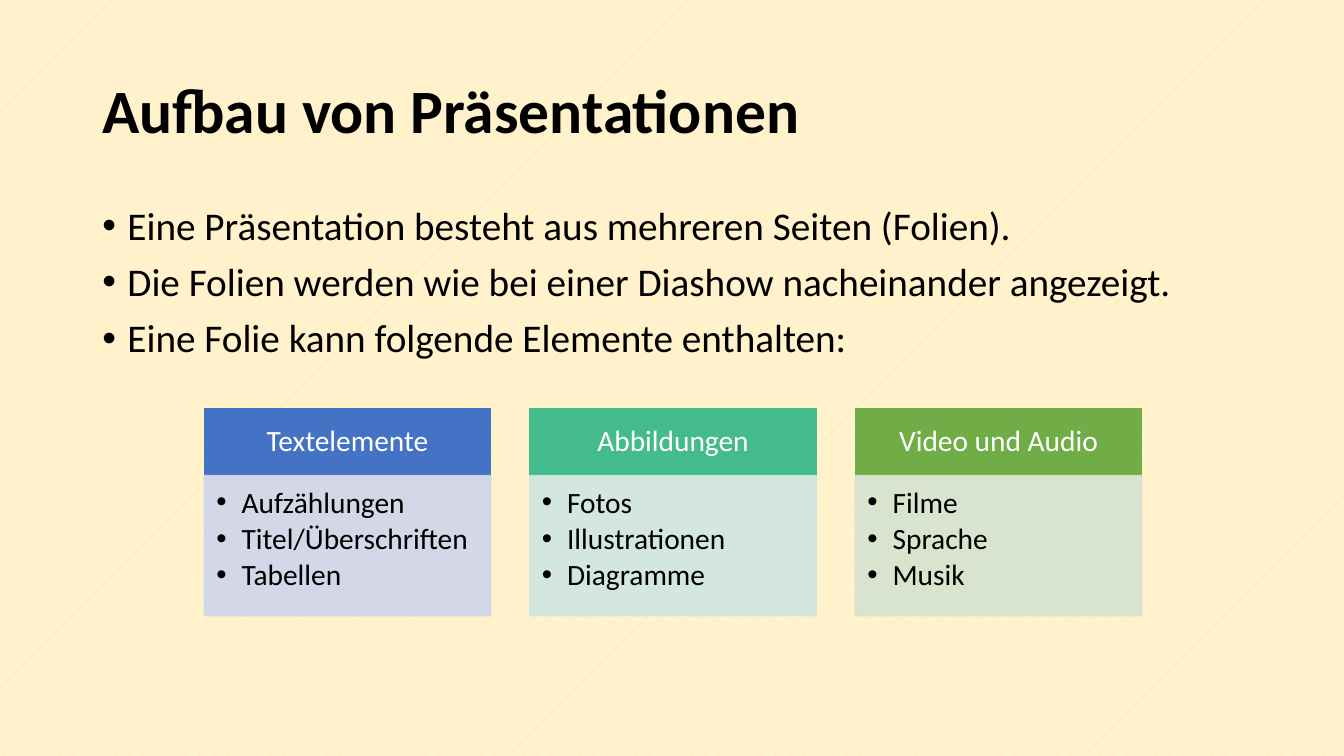
import lxml.etree
import pptx
import pptx.dml.color
import pptx.enum.dml
import pptx.enum.shapes
import pptx.enum.text
import pptx.oxml.ns
import pptx.util

Pt = pptx.util.Pt
RGBColor = pptx.dml.color.RGBColor
ANCHOR = pptx.enum.text.MSO_ANCHOR
ALIGN = pptx.enum.text.PP_ALIGN
qn = pptx.oxml.ns.qn

BLACK = RGBColor(0x00, 0x00, 0x00)
WHITE = RGBColor(0xFF, 0xFF, 0xFF)
CREAM = RGBColor(0xFF, 0xF2, 0xCC)
YELLOW = RGBColor(0xFF, 0xE6, 0x99)
BLUE = RGBColor(0x44, 0x72, 0xC4)
PALE_BLUE = RGBColor(0xCF, 0xD5, 0xEA)
TEAL = RGBColor(0x43, 0xBB, 0x8D)
PALE_TEAL = RGBColor(0xCF, 0xE6, 0xE0)
GREEN = RGBColor(0x70, 0xAD, 0x47)
PALE_GREEN = RGBColor(0xD5, 0xE3, 0xCF)

STATEMENTS = [
    "Eine Präsentation besteht aus mehreren Seiten (Folien).",
    "Die Folien werden wie bei einer Diashow nacheinander angezeigt.",
    "Eine Folie kann folgende Elemente enthalten:",
]
CARDS = [
    ("Textelemente", ["Aufzählungen", "Titel/Überschriften", "Tabellen"], BLUE, PALE_BLUE),
    ("Abbildungen", ["Fotos", "Illustrationen", "Diagramme"], TEAL, PALE_TEAL),
    ("Video und Audio", ["Filme", "Sprache", "Musik"], GREEN, PALE_GREEN),
]
CARD_LEFT, CARD_STEP, CARD_WIDTH = 146, 232.5, 204.5
HEADER_TOP, HEADER_HEIGHT, LIST_HEIGHT = 291.9, 47.9, 100


def write_text(shape, lines, size, color=BLACK, bold=False, align=ALIGN.LEFT,
               anchor=ANCHOR.TOP, insets=(7.2, 3.6, 7.2, 3.6),
               before=0, after=0, bullets=False):
    """Fill a shape with one paragraph per line; insets run left, top, right, bottom."""
    frame = shape.text_frame
    frame.word_wrap = True
    frame.vertical_anchor = anchor
    frame.margin_left, frame.margin_top, frame.margin_right, frame.margin_bottom = map(Pt, insets)
    for index, line in enumerate(lines):
        para = frame.paragraphs[0] if index == 0 else frame.add_paragraph()
        para.alignment = align
        para.line_spacing = 0.9
        para.space_before, para.space_after = Pt(before), Pt(after)
        span = para.add_run()
        span.text = line
        span.font.name = "Calibri"
        span.font.size = Pt(size)
        span.font.bold = bold
        span.font.color.rgb = color
        if bullets:
            properties = para._p.get_or_add_pPr()
            properties.set("marL", str(Pt(18)))
            properties.set("indent", str(-Pt(18)))
            lxml.etree.SubElement(properties, qn("a:buFont"), typeface="Arial")
            lxml.etree.SubElement(properties, qn("a:buChar"), char="•")


def add_block(page, left, top, height, color, opacity=100):
    block = page.shapes.add_shape(pptx.enum.shapes.MSO_SHAPE.RECTANGLE,
                                  Pt(left), Pt(top), Pt(CARD_WIDTH), Pt(height))
    block.shadow.inherit = False
    block.fill.solid()
    block.fill.fore_color.rgb = color
    block.line.color.rgb = color
    block.line.width = Pt(1)
    if opacity < 100:
        for tint in block.element.spPr.iter(qn("a:srgbClr")):
            lxml.etree.SubElement(tint, qn("a:alpha"), val=str(opacity * 1000))
    return block


deck = pptx.Presentation()
deck.slide_width, deck.slide_height = Pt(960), Pt(540)
page = deck.slides.add_slide(deck.slide_layouts[5])

background = page.background.fill
background.patterned()
background.pattern = pptx.enum.dml.MSO_PATTERN.PERCENT_5
background.fore_color.rgb = YELLOW
background.back_color.rgb = CREAM

title = page.shapes.title
title.left, title.top, title.width, title.height = Pt(66), Pt(28.8), Pt(828), Pt(104.4)
write_text(title, ["Aufbau von Präsentationen"], 44, bold=True, anchor=ANCHOR.MIDDLE)

body = page.shapes.add_textbox(Pt(66), Pt(143.8), Pt(828), Pt(342.6))
write_text(body, STATEMENTS, 28, before=10, bullets=True)

for column, (heading, items, color, pale_color) in enumerate(CARDS):
    left = CARD_LEFT + column * CARD_STEP
    header = add_block(page, left, HEADER_TOP, HEADER_HEIGHT, color)
    write_text(header, [heading], 21, color=WHITE, align=ALIGN.CENTER,
               anchor=ANCHOR.MIDDLE, insets=(11.5, 6.5, 11.5, 6.5))
    listing = add_block(page, left, HEADER_TOP + HEADER_HEIGHT, LIST_HEIGHT, pale_color, opacity=90)
    write_text(listing, items, 21, insets=(8.6, 8.6, 11.5, 13), after=3.15, bullets=True)

deck.save("out.pptx")
